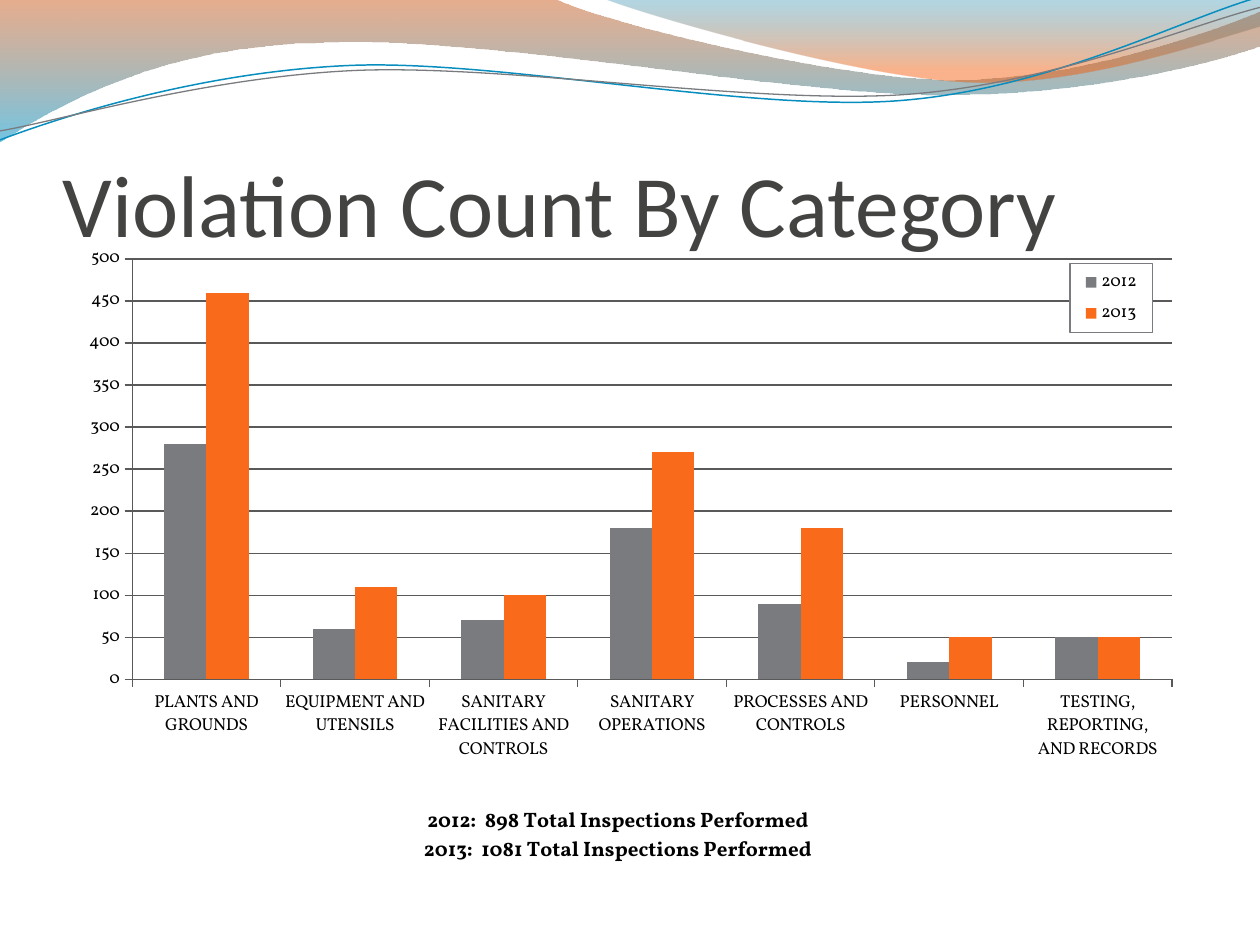
import math

import pptx
import pptx.chart.data
import pptx.dml.color
import pptx.enum.chart
import pptx.enum.text
import pptx.oxml
import pptx.oxml.ns
import pptx.util
from lxml import etree

Cm, Pt = pptx.util.Cm, pptx.util.Pt
qn = pptx.oxml.ns.qn

# Content
TITLE = "Violation Count By Category"
CATEGORIES = ["PLANTS AND GROUNDS", "EQUIPMENT AND UTENSILS",
              "SANITARY FACILITIES AND CONTROLS", "SANITARY OPERATIONS",
              "PROCESSES AND CONTROLS", "PERSONNEL",
              "TESTING, REPORTING, AND RECORDS"]
SERIES = [("2012", "797B7E", [280, 60, 70, 180, 90, 20, 50]),
          ("2013", "F96A1B", [460, 110, 100, 270, 180, 50, 50])]
TOTALS = ["2012:  898 Total Inspections Performed",
          "2013:  1081 Total Inspections Performed"]

# Waves in cm: a start point, then lines (one point) or curves (three points)
# Gradient stops: position, colour, opacity in percent
BANDS = [
    ([[(0, -0.03)], [(11.18, -0.03)],
      [(12.09, 0.43), (16.87, 1.6), (19.25, 1.6)],
      [(21.67, 1.6), (24.33, 0.66), (25.4, 0.23)],
      [(25.43, 0.91)],
      [(24.97, 1.12), (22.1, 1.93), (18.95, 1.91)],
      [(15.8, 1.91), (9.7, 0.71), (6.53, 0.86)],
      [(3.28, 0.89), (1.17, 2.11), (-0.03, 2.87)]],
     [(0, "C94A04", 45), (1, "0095CC", 55)]),
    ([[(12.17, -0.03)],
      [(12.93, 0.28), (17.32, 1.57), (19.53, 1.65)],
      [(21.74, 1.75), (24.41, 0.81), (25.4, 0.53)],
      [(25.4, 0)]],
     [(0, "007AA6", 30), (0.8, "F45700", 45)]),
]
LINES = [
    ([[(0, 2.82)],
      [(1.22, 2.36), (4.01, 1.45), (7.04, 1.32)],
      [(10.03, 1.19), (15.06, 2.26), (18.11, 2.03)],
      [(21.16, 1.8), (23.83, 0.38), (25.35, -0.05)]],
     (12.67, 1.46), "078EBF", 0.85),
    ([[(0, 2.64)],
      [(1.19, 2.44), (4.17, 1.55), (7.19, 1.42)],
      [(10.24, 1.3), (15.16, 2.11), (18.21, 1.91)],
      [(21.23, 1.7), (23.9, 0.53), (25.4, 0.15)]],
     (12.69, 1.5), "797B7E", 0.75),
]
LINE_TILT = -2.7


def rgb(value):
    return pptx.dml.color.RGBColor.from_string(value)


def turn(point, center, degrees):
    angle = math.radians(degrees)
    x, y = point[0] - center[0], point[1] - center[1]
    return (center[0] + x * math.cos(angle) - y * math.sin(angle),
            center[1] + x * math.sin(angle) + y * math.cos(angle))


def add_wave(page, outline, close):
    """Draw all points as a polygon, then merge each three into a curve."""
    points = [(Cm(x), Cm(y)) for segment in outline for x, y in segment]
    builder = page.shapes.build_freeform(*points[0])
    builder.add_line_segments(points[1:], close=close)
    shape = builder.convert_to_shape()
    shape.shadow.inherit = False
    steps = iter(list(shape.element.iter(qn("a:lnTo"))))
    for segment in outline[1:]:
        nodes = [next(steps) for _ in segment]
        if len(nodes) == 3:
            curve = etree.Element(qn("a:cubicBezTo"))
            nodes[0].addprevious(curve)
            for node in nodes:
                curve.append(node[0])
                node.getparent().remove(node)
    return shape


def set_layout(element, index, **fractions):
    """Place a chart part by fractions of the chart's size."""
    for old in element.findall(qn("c:layout")):
        element.remove(old)
    layout = etree.Element(qn("c:layout"))
    manual = etree.SubElement(layout, qn("c:manualLayout"))
    if element.tag == qn("c:plotArea"):
        etree.SubElement(manual, qn("c:layoutTarget"), val="inner")
    for name in ("x", "y"):
        etree.SubElement(manual, qn("c:" + name + "Mode"), val="edge")
    for name, value in fractions.items():
        etree.SubElement(manual, qn("c:" + name), val=str(value))
    element.insert(index, layout)


deck = pptx.Presentation()
deck.slide_width, deck.slide_height = Cm(25.4), Cm(19.05)
page = deck.slides.add_slide(deck.slide_layouts[6])

# Gradient bands along the top
for outline, stops in BANDS:
    band = add_wave(page, outline, True)
    band.line.fill.background()
    band.fill.gradient()
    band.fill.gradient_angle = 270
    for stop, (position, color, _) in zip(band.fill.gradient_stops, stops):
        stop.position = position
        stop.color.rgb = rgb(color)
    for node, (_, _, opacity) in zip(band.element.spPr.iter(qn("a:srgbClr")), stops):
        etree.SubElement(node, qn("a:alpha"), val=str(opacity * 1000))

# Thin wave lines, drawn level and then tilted
for outline, center, color, width in LINES:
    level = [[turn(point, center, -LINE_TILT) for point in segment]
             for segment in outline]
    wave = add_wave(page, level, False)
    wave.rotation = LINE_TILT
    wave.fill.background()
    wave.line.color.rgb = rgb(color)
    wave.line.width = Pt(width)

# Title
box = page.shapes.add_textbox(Cm(1.27), Cm(1.96), Cm(22.86), Cm(3.18))
frame = box.text_frame
frame.word_wrap = True
frame.vertical_anchor = pptx.enum.text.MSO_ANCHOR.BOTTOM
frame.margin_left = frame.margin_right = frame.margin_bottom = 0
frame.text = TITLE
font = frame.paragraphs[0].runs[0].font
font.name, font.size = "Calibri", Pt(50)
font.color.rgb = rgb("434342")

# Column chart
data = pptx.chart.data.CategoryChartData()
data.categories = CATEGORIES
for name, _, values in SERIES:
    data.add_series(name, values)
chart = page.shapes.add_chart(
    pptx.enum.chart.XL_CHART_TYPE.COLUMN_CLUSTERED,
    Cm(1.27), Cm(3.61), Cm(22.86), Cm(13.97), data).chart
chart.has_title = False
chart.font.name, chart.font.size = "Vollkorn", Pt(10)
chart.font.color.rgb = rgb("000000")
plot = chart.plots[0]
plot.gap_width, plot.overlap = 150, 0
plot.vary_by_categories = False
for series, (_, color, _) in zip(plot.series, SERIES):
    series.format.fill.solid()
    series.format.fill.fore_color.rgb = rgb(color)
plot_area = chart._chartSpace.chart.plotArea
set_layout(plot_area, 0, x=0.061, y=0.116, w=0.917, h=0.61)

# Axes
values_axis, names_axis = chart.value_axis, chart.category_axis
values_axis.minimum_scale, values_axis.maximum_scale = 0, 500
values_axis.major_unit = 50
values_axis.has_major_gridlines = True
for axis in (values_axis, names_axis):
    axis.major_tick_mark = pptx.enum.chart.XL_TICK_MARK.OUTSIDE
for part in (values_axis, names_axis, values_axis.major_gridlines):
    part.format.line.color.rgb = rgb("595959")
    part.format.line.width = Pt(0.75)

# Inspection totals as the category axis title
axis_title = names_axis.axis_title
axis_title.text_frame.text = "\n".join(TOTALS)
for para in axis_title.text_frame.paragraphs:
    for span in para.runs:
        span.font.name, span.font.size, span.font.bold = "Vollkorn", Pt(12), True
        span.font.color.rgb = rgb("000000")
set_layout(axis_title._element, 1, x=0.315, y=0.904)

# Legend over the plot, with a thin frame
chart.has_legend = True
legend = chart.legend
legend.position = pptx.enum.chart.XL_LEGEND_POSITION.RIGHT
legend.include_in_layout = True
set_layout(legend._element, 1, x=0.888, y=0.122, w=0.073, h=0.101)
border = pptx.oxml.parse_xml(
    '<c:spPr %s><a:solidFill><a:srgbClr val="FFFFFF"/></a:solidFill>'
    '<a:ln w="9525"><a:solidFill><a:srgbClr val="797B7E"/></a:solidFill></a:ln>'
    '</c:spPr>' % pptx.oxml.ns.nsdecls("c", "a"))
legend._element.find(qn("c:overlay")).addnext(border)

deck.save("out.pptx")
